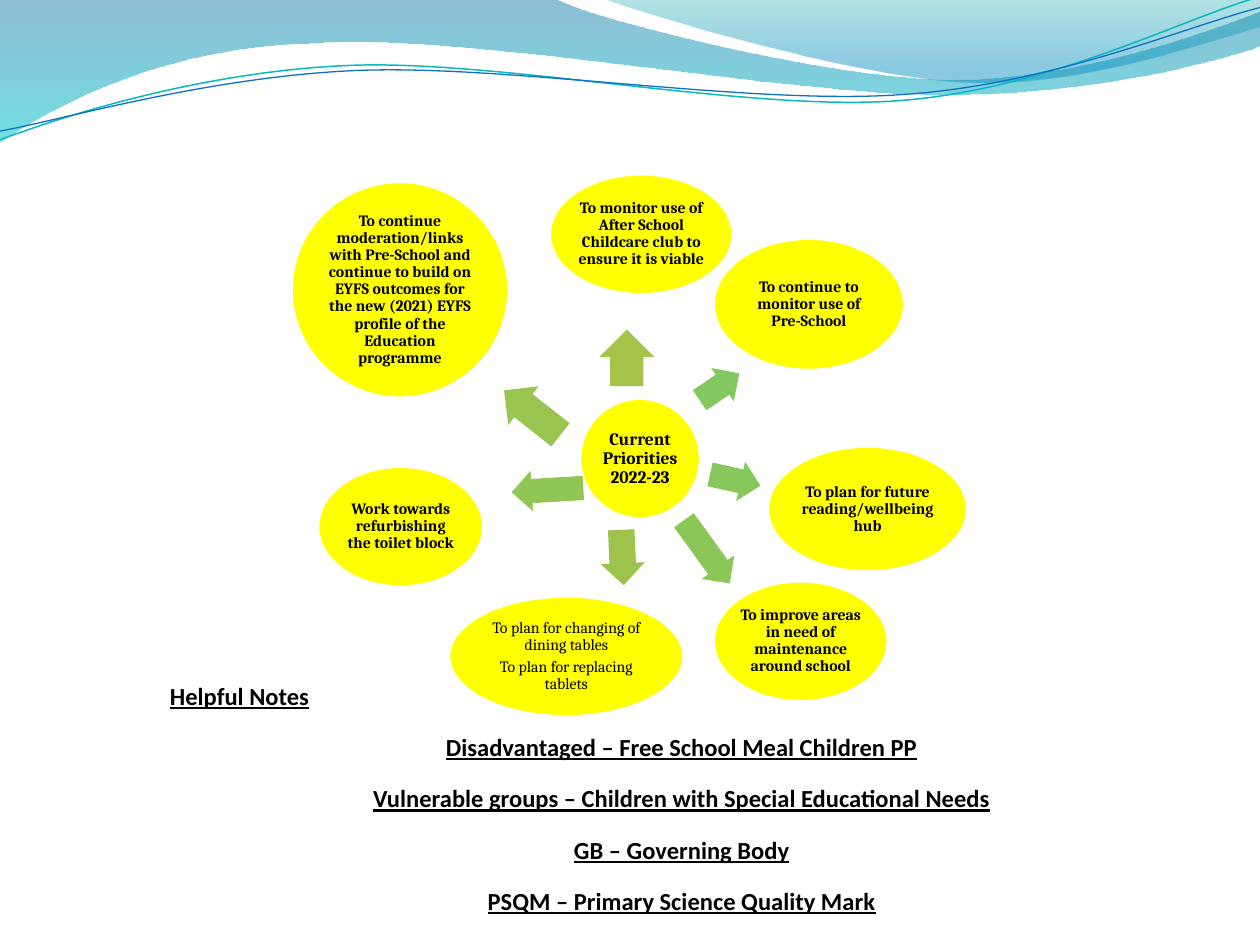
from pptx import Presentation
from pptx.dml.color import RGBColor
from pptx.enum import shapes, text
from pptx.oxml.ns import qn
from pptx.util import Inches, Pt
from lxml import etree

BLACK = RGBColor(0, 0, 0)
WHITE = RGBColor(0xFF, 0xFF, 0xFF)
YELLOW = RGBColor(0xFF, 0xFF, 0)
TEAL = RGBColor(0x0A, 0xB8, 0xBF)
BLUE = RGBColor(0x0F, 0x6F, 0xC6)

prs = Presentation()
prs.slide_width, prs.slide_height = Inches(10), Inches(7.5)
s = prs.slides.add_slide(prs.slide_layouts[6])


def add_wave(start, segments, close):
    """Outline from (x, y) line ends and six-number cubic curves, in inches."""
    builder = s.shapes.build_freeform(Inches(start[0]), Inches(start[1]))
    ends = [(Inches(seg[-2]), Inches(seg[-1])) for seg in segments]
    builder.add_line_segments(ends, close=close)
    sp = builder.convert_to_shape()
    sp.shadow.inherit = False
    # Turn straight pieces into curves by adding their two control points
    for piece, seg in zip(list(sp._element.iter(qn("a:lnTo"))), segments):
        if len(seg) == 6:
            piece.tag = qn("a:cubicBezTo")
            for i in (0, 1):
                x, y = Inches(seg[2 * i]) - sp.left, Inches(seg[2 * i + 1]) - sp.top
                piece.insert(i, etree.Element(qn("a:pt"), x=str(x), y=str(y)))
    return sp


def format_paragraph(p, font, size, bold, align, spacing, after):
    p.alignment, p.line_spacing, p.space_after = align, spacing, Pt(after)
    p.font.name, p.font.size, p.font.bold = font, Pt(size), bold
    p.font.color.rgb = BLACK


# Header bands: start, segments, gradient stops (position, colour, opacity %)
bands = [
    ((0, 0), [(4.4, -0.01), (4.76, 0.17, 6.64, 0.63, 7.58, 0.63),
              (8.53, 0.63, 9.58, 0.26, 10, 0.09), (10.01, 0.36),
              (9.83, 0.44, 8.7, 0.76, 7.46, 0.75), (6.22, 0.75, 3.82, 0.28, 2.57, 0.34),
              (1.29, 0.36, 0.46, 0.83, -0.01, 1.13)],
     [(0, "0074A1", 45), (1, "00C6CF", 55)]),
    ((4.79, -0.01), [(5.09, 0.11, 6.82, 0.62, 7.69, 0.65),
                     (8.56, 0.69, 9.61, 0.32, 10, 0.21), (10, 0)],
     [(0, "00A1A9", 30), (0.8, "008BBF", 45)]),
]
for start, segments, stops in bands:
    sp = add_wave(start, segments, True)
    sp.line.fill.background()
    sp.fill.gradient()
    sp.fill.gradient_angle = 270
    for stop, (position, color, _) in zip(sp.fill.gradient_stops, stops):
        stop.position = position
        stop.color.rgb = RGBColor.from_string(color)
    for clr, (_, _, opacity) in zip(sp._element.iter(qn("a:srgbClr")), stops):
        etree.SubElement(clr, qn("a:alpha"), val=str(opacity * 1000))

# Header lines
curves = [
    ((0, 1.11), [(0.48, 0.93, 1.58, 0.57, 2.77, 0.52), (3.95, 0.47, 5.93, 0.89, 7.13, 0.8),
                 (8.33, 0.71, 9.38, 0.15, 9.98, -0.02)], TEAL, 0.85),
    ((0, 1.04), [(0.47, 0.96, 1.64, 0.61, 2.83, 0.56), (4.03, 0.51, 5.97, 0.84, 7.17, 0.75),
                 (8.36, 0.67, 9.41, 0.21, 10, 0.06)], BLUE, 0.75),
]
for start, segments, color, width in curves:
    sp = add_wave(start, segments, False)
    sp.fill.background()
    sp.line.color.rgb, sp.line.width = color, Pt(width)

# Priority bubbles: box, text size, bold, paragraphs
bubbles = [
    ((4.36, 1.38, 1.46, 0.96), 9, True,
     ["To monitor use of After School Childcare club to ensure it is viable"]),
    ((5.66, 1.89, 1.52, 1.05), 9, True, ["To continue to monitor use of Pre-School"]),
    ((4.6, 3.16, 0.96, 0.96), 10, True, ["Current Priorities 2022-23"]),
    ((6.09, 3.54, 1.59, 1), 9, True, ["To plan for future reading/wellbeing hub"]),
    ((5.66, 4.61, 1.39, 0.96), 9, True,
     ["To improve areas in need of maintenance around school"]),
    ((3.56, 4.73, 1.87, 0.96), 9, False,
     ["To plan for changing of dining tables", "To plan for replacing tablets"]),
    ((2.52, 3.7, 1.32, 0.96), 9, True, ["Work towards refurbishing the toilet block"]),
    ((2.31, 1.44, 1.73, 1.72), 9, True,
     ["To continue moderation/links with Pre-School and continue to build on EYFS "
      "outcomes for the new (2021) EYFS profile of the Education programme"]),
]
for box, size, bold, lines in bubbles:
    sp = s.shapes.add_shape(shapes.MSO_SHAPE.OVAL, *map(Inches, box))
    sp.shadow.inherit = False
    sp.fill.solid()
    sp.fill.fore_color.rgb = YELLOW
    sp.line.color.rgb, sp.line.width = WHITE, Pt(2)
    tf = sp.text_frame
    tf.word_wrap = True
    tf.vertical_anchor = text.MSO_ANCHOR.MIDDLE
    tf.margin_left = tf.margin_right = tf.margin_top = tf.margin_bottom = Inches(0.01)
    tf.text = "\n".join(lines)
    for p in tf.paragraphs:
        format_paragraph(p, "Cambria", size, bold, text.PP_ALIGN.CENTER, 0.9, 0.35 * size)

# Arrows out of the centre: box, rotation, colour
arrows = [
    ((5.52, 2.91, 0.38, 0.32), 325.9, "81C95E"),
    ((5.63, 3.65, 0.41, 0.32), 12.6, "86C85B"),
    ((5.3, 4.22, 0.62, 0.32), 54, "8BC757"),
    ((4.06, 3.73, 0.57, 0.32), 176.6, "91C554"),
    ((3.94, 3.08, 0.57, 0.39), 218.2, "98C450"),
    ((4.72, 4.25, 0.44, 0.35), 87.4, "9EC34D"),
    ((4.75, 2.62, 0.45, 0.44), 270, "A5C249"),
]
for box, rotation, color in arrows:
    sp = s.shapes.add_shape(shapes.MSO_SHAPE.RIGHT_ARROW, *map(Inches, box))
    sp.shadow.inherit = False
    sp.rotation = rotation
    sp.adjustments[0], sp.adjustments[1] = 0.6, 0.5
    sp.fill.solid()
    sp.fill.fore_color.rgb = RGBColor.from_string(color)
    sp.line.fill.background()

# Helpful notes
notes = [
    "Helpful Notes",
    "Disadvantaged – Free School Meal Children PP",
    "Vulnerable groups – Children with Special Educational Needs",
    "GB – Governing Body",
    "PSQM – Primary Science Quality Mark",
]
tf = s.shapes.add_textbox(Inches(0.75), Inches(5.32), Inches(8.82), Inches(2)).text_frame
tf.word_wrap = True
tf.auto_size = text.MSO_AUTO_SIZE.SHAPE_TO_FIT_TEXT
tf.text = "\n".join(notes)
for i, p in enumerate(tf.paragraphs):
    align = text.PP_ALIGN.CENTER if i else text.PP_ALIGN.JUSTIFY
    format_paragraph(p, "Calibri", 14, True, align, 1.15, 10)
    p.font.underline = True
    pPr = p._p.get_or_add_pPr()
    pPr.set("marL", "0")
    pPr.set("indent", str(Inches(0.5)))

prs.save("out.pptx")
